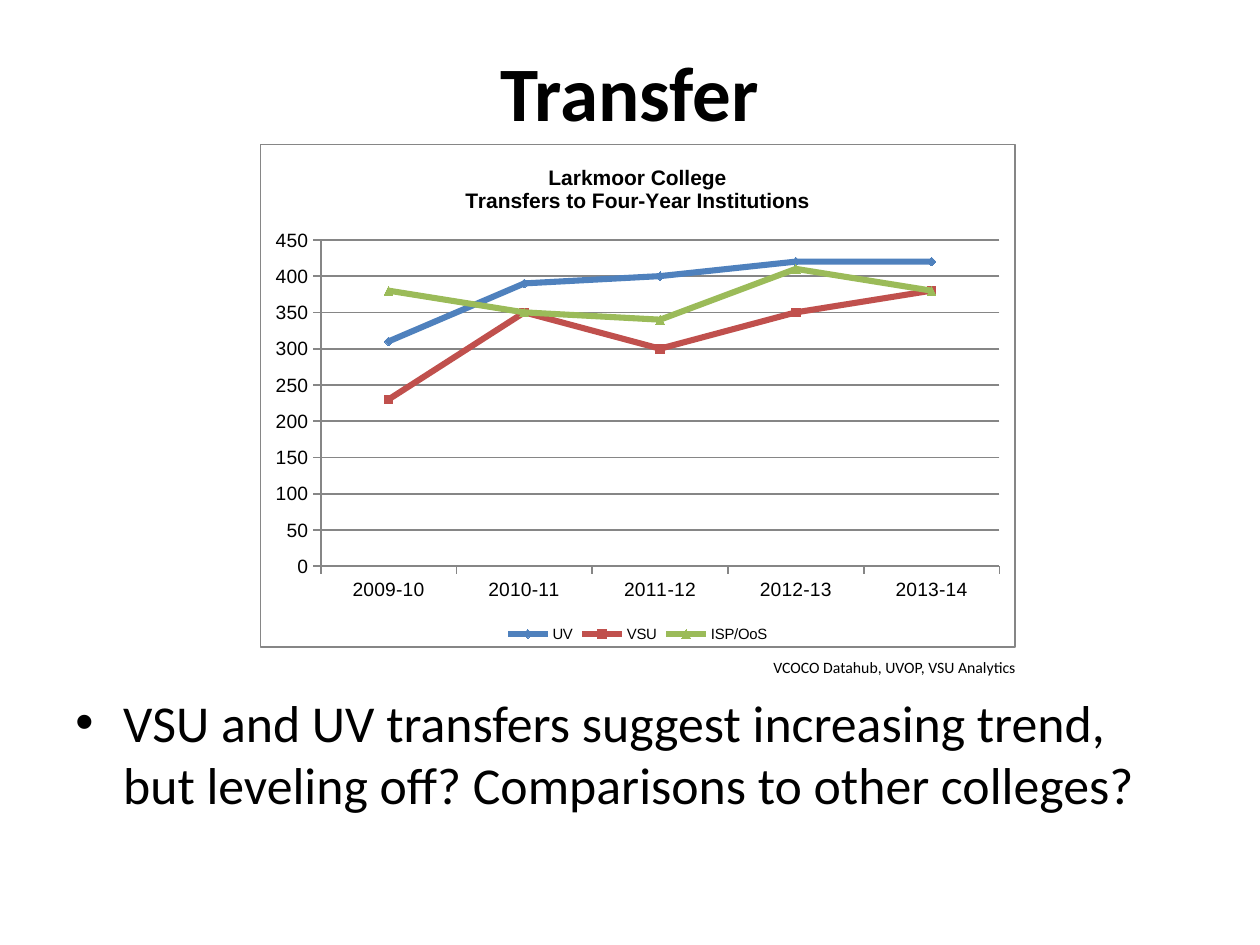
"""Build the Transfer slide with a line chart and one bullet."""
from lxml import etree
from pptx import Presentation
from pptx.chart.data import CategoryChartData
from pptx.dml.color import RGBColor
from pptx.enum.chart import (XL_CHART_TYPE, XL_LEGEND_POSITION,
                             XL_MARKER_STYLE, XL_TICK_MARK)
from pptx.enum.text import MSO_ANCHOR, PP_ALIGN
from pptx.oxml import parse_xml
from pptx.oxml.ns import nsdecls, qn
from pptx.util import Inches, Pt

LINE = XL_CHART_TYPE.LINE_MARKERS
BOTTOM = XL_LEGEND_POSITION.BOTTOM
OUT, NONE = XL_TICK_MARK.OUTSIDE, XL_TICK_MARK.NONE
MIDDLE, CENTER, LEFT = MSO_ANCHOR.MIDDLE, PP_ALIGN.CENTER, PP_ALIGN.LEFT
DIAMOND = XL_MARKER_STYLE.DIAMOND
SQUARE = XL_MARKER_STYLE.SQUARE
TRIANGLE = XL_MARKER_STYLE.TRIANGLE

WIDE, HIGH = Inches(10), Inches(7.5)
COLORS = {"ink": "000000", "grid": "868686", "UV": "4F81BD",
          "VSU": "C0504D", "ISP/OoS": "9BBB59"}
YEARS = ["2009-10", "2010-11", "2011-12", "2012-13", "2013-14"]
SERIES = {
    "UV": (DIAMOND, [310, 390, 400, 420, 420]),
    "VSU": (SQUARE, [230, 350, 300, 350, 380]),
    "ISP/OoS": (TRIANGLE, [380, 350, 340, 410, 380]),
}
PLOT = {"x": 0.08, "y": 0.19, "w": 0.9, "h": 0.65}


def color(name):
    """Return the named colour."""
    return RGBColor.from_string(COLORS[name])


def area(left, top, width, height):
    """Turn inches into a left, top, width, height tuple."""
    return tuple(Inches(n) for n in (left, top, width, height))


def style(font, size, face="Calibri", bold=False):
    """Set the look of a font."""
    font.size, font.name, font.bold = Pt(size), face, bold
    font.color.rgb = color("ink")


def add_title(slide, text, box):
    """Fill and place the title."""
    title = slide.shapes.title
    title.left, title.top, title.width, title.height = box
    frame = title.text_frame
    frame.text, frame.vertical_anchor = text, MIDDLE
    frame.paragraphs[0].alignment = CENTER
    style(frame.paragraphs[0].font, 44, bold=True)


def add_text(slide, text, box, size):
    """Add a wrapped text box and return its paragraph."""
    frame = slide.shapes.add_textbox(*box).text_frame
    frame.word_wrap, frame.text = True, text
    para = frame.paragraphs[0]
    para.alignment = LEFT
    style(para.font, size)
    return para


def add_bullet(para, indent):
    """Give a paragraph a hanging bullet."""
    props = para._p.get_or_add_pPr()
    props.set("marL", str(indent))
    props.set("indent", str(-indent))
    etree.SubElement(props, qn("a:buFont")).set("typeface", "Arial")
    etree.SubElement(props, qn("a:buChar")).set("char", "•")


def set_line(line):
    """Draw a thin grey line."""
    line.color.rgb, line.width = color("grid"), Pt(1)


def set_plot(chart):
    """Fix the inner plot area as shares of the chart."""
    plot = chart._chartSpace.chart.plotArea
    for old in plot.findall(qn("c:layout")):
        plot.remove(old)
    layout = etree.Element(qn("c:layout"))
    manual = etree.SubElement(layout, qn("c:manualLayout"))
    rules = {"layoutTarget": "inner", "xMode": "edge", "yMode": "edge", **PLOT}
    for tag, val in rules.items():
        etree.SubElement(manual, qn(f"c:{tag}")).set("val", str(val))
    plot.insert(0, layout)


def add_border(chart):
    """Frame the chart in grey."""
    frame = parse_xml(
        f'<c:spPr {nsdecls("c", "a")}><a:noFill/><a:ln w="{Pt(1)}"><a:solidFill>'
        f'<a:srgbClr val="{COLORS["grid"]}"/></a:solidFill></a:ln></c:spPr>')
    chart._chartSpace.find(qn("c:txPr")).addprevious(frame)


def add_chart(slide, box):
    """Add the transfer line chart."""
    data = CategoryChartData()
    data.categories = YEARS
    for name, (_, vals) in SERIES.items():
        data.add_series(name, vals)
    chart = slide.shapes.add_chart(LINE, *box, data).chart
    style(chart.font, 18)
    head = chart.chart_title.text_frame
    head.text = "Larkmoor College\nTransfers to Four-Year Institutions"
    for para in head.paragraphs:
        style(para.font, 12, "Arial", True)
    for axis in (chart.category_axis, chart.value_axis):
        style(axis.tick_labels.font, 11, "Arial")
        axis.major_tick_mark, axis.minor_tick_mark = OUT, NONE
        set_line(axis.format.line)
    scale = chart.value_axis
    scale.minimum_scale, scale.maximum_scale, scale.major_unit = 0, 450, 50
    set_line(scale.major_gridlines.format.line)
    chart.has_legend = True
    chart.legend.position, chart.legend.include_in_layout = BOTTOM, False
    style(chart.legend.font, 8.5, "Arial")
    for item in chart.plots[0].series:
        tint, mark = color(item.name), item.marker
        item.smooth = False
        item.format.line.color.rgb, item.format.line.width = tint, Pt(3.5)
        mark.style, mark.size = SERIES[item.name][0], 5
        mark.format.fill.solid()
        mark.format.fill.fore_color.rgb = tint
        mark.format.line.color.rgb = tint
    set_plot(chart)
    add_border(chart)


def main():
    """Build and save the slide."""
    deck = Presentation()
    deck.slide_width, deck.slide_height = WIDE, HIGH
    slide = deck.slides.add_slide(deck.slide_layouts[5])
    add_title(slide, "Transfer", area(0.5, 0.3, 9, 0.84))
    point = add_text(slide, "VSU and UV transfers suggest increasing trend, "
                     "but leveling off? Comparisons to other colleges?",
                     area(0.5, 5.43, 9, 1.07), 29.6)
    add_bullet(point, Inches(0.38))
    add_chart(slide, area(2.06, 1.14, 6, 4))
    add_text(slide, "VCOCO Datahub, UVOP, VSU Analytics",
             area(6.04, 5.17, 2.22, 0.25), 9)
    deck.save("out.pptx")


if __name__ == "__main__":
    main()
